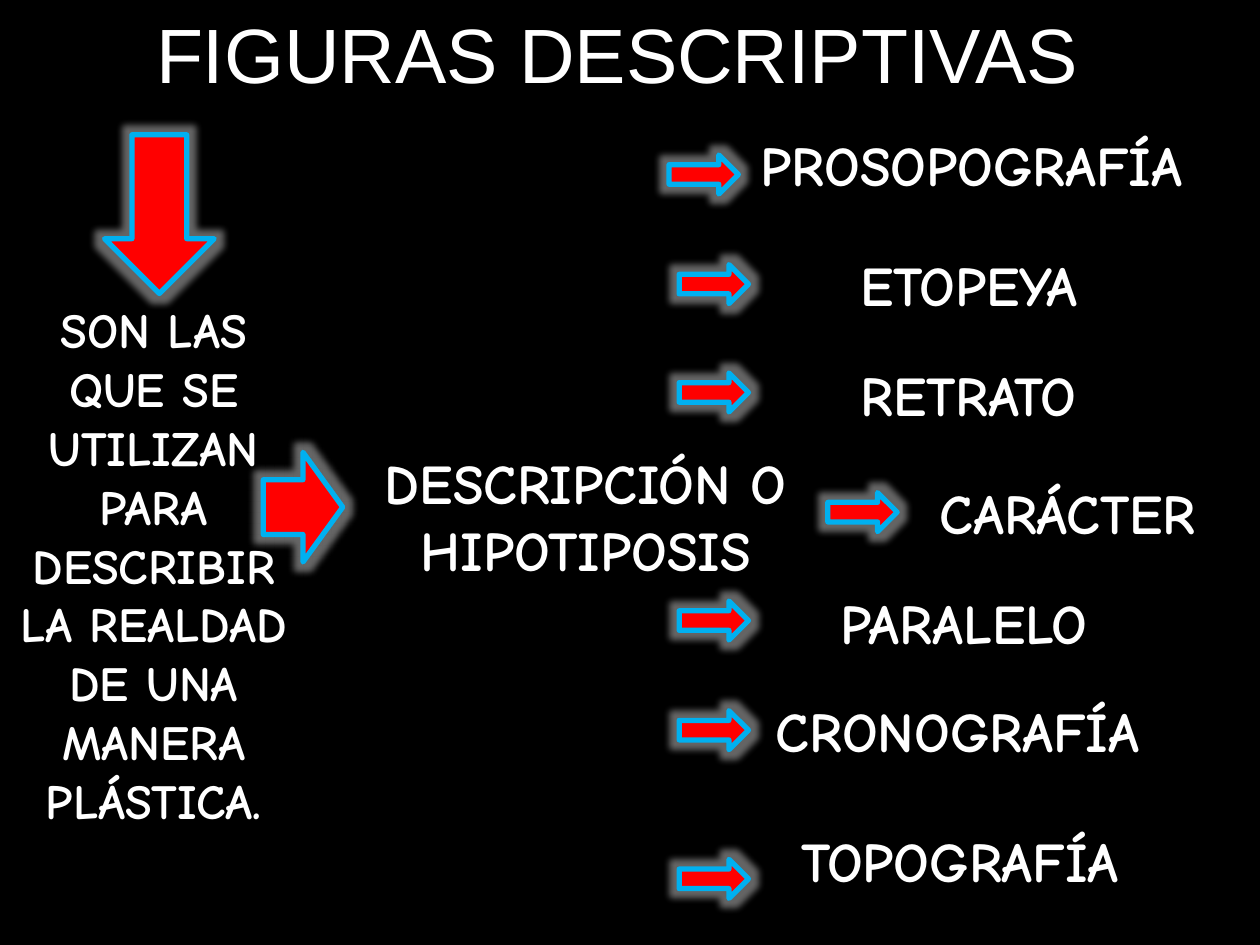
from lxml import etree
from pptx import Presentation
from pptx.dml.color import RGBColor
from pptx.enum.shapes import MSO_SHAPE as Shape
from pptx.enum.text import MSO_AUTO_SIZE as Fit, PP_ALIGN as Align
from pptx.oxml.ns import qn
from pptx.util import Inches, Pt

BLACK = RGBColor(0x00, 0x00, 0x00)
WHITE = RGBColor(0xFF, 0xFF, 0xFF)
RED = RGBColor(0xFF, 0x00, 0x00)
BLUE = RGBColor(0x00, 0xB0, 0xF0)
HAND = "Comic Neue"

# Content: text, box (left, top, width, height)
TITLE = ("FIGURAS DESCRIPTIVAS", (1.14, 0, 7.64, 0.84))
MEANING = ("SON LAS QUE SE UTILIZAN PARA DESCRIBIR LA REALDAD "
           "DE UNA MANERA PLÁSTICA.", (0, 2.33, 2.44, 4.81))
TOPIC = ("DESCRIPCIÓN O HIPOTIPOSIS", (2.64, 3.51, 4.02, 1.18))

# Figures: name, text left, top, width, arrow left, top
FIGURES = [
    ("PROSOPOGRAFÍA", 5.94, 0.99, 4.72, 5.31, 1.23),
    ("ETOPEYA", 6.73, 1.94, 2.4, 5.39, 2.1),
    ("RETRATO", 6.73, 2.81, 2.48, 5.39, 2.96),
    ("CARÁCTER", 7.36, 3.75, 2.87, 6.57, 3.91),
    ("PARALELO", 6.57, 4.62, 3.74, 5.39, 4.77),
    ("CRONOGRAFÍA", 6.06, 5.48, 3.94, 5.39, 5.64),
    ("TOPOGRAFÍA", 6.26, 6.51, 3.27, 5.39, 6.82),
]

deck = Presentation()
deck.slide_width, deck.slide_height = Inches(10), Inches(7.5)
slide = deck.slides.add_slide(deck.slide_layouts[6])
slide.background.fill.solid()
slide.background.fill.fore_color.rgb = BLACK


def add_text(text, box, size, font=HAND, bold=True, align=Align.LEFT, wrap=True):
    frame = slide.shapes.add_textbox(*map(Inches, box)).text_frame
    frame.word_wrap = wrap
    frame.auto_size = Fit.SHAPE_TO_FIT_TEXT
    para = frame.paragraphs[0]
    para.alignment = align
    run = para.add_run()
    run.text = text
    run.font.name, run.font.size, run.font.bold = font, Pt(size), bold
    run.font.color.rgb = WHITE


def add_arrow(kind, box):
    arrow = slide.shapes.add_shape(kind, *map(Inches, box))
    arrow.fill.solid()
    arrow.fill.fore_color.rgb = RED
    arrow.line.color.rgb = BLUE
    arrow.line.width = Pt(3)
    # Soft white glow in place of the shadow
    arrow.shadow.inherit = False
    effects = arrow.element.spPr.find(qn("a:effectLst"))
    glow = etree.SubElement(effects, qn("a:glow"), rad=str(Pt(8)))
    tint = etree.SubElement(glow, qn("a:srgbClr"), val=str(WHITE))
    etree.SubElement(tint, qn("a:alpha"), val="40000")


# Title, meaning and topic
add_text(*TITLE, 44, font="Arial", bold=False, wrap=False)
add_arrow(Shape.DOWN_ARROW, (0.83, 1.07, 0.87, 1.26))
add_text(*MEANING, 28, align=Align.CENTER)
add_text(*TOPIC, 32, align=Align.CENTER)

# Figures, each with its arrow
for name, left, top, width, tip_x, tip_y in FIGURES:
    add_arrow(Shape.RIGHT_ARROW, (tip_x, tip_y, 0.55, 0.31))
    add_text(name, (left, top, width, 0.64), 32)

# Arrow from meaning to topic
add_arrow(Shape.RIGHT_ARROW, (2.09, 3.59, 0.63, 0.87))

deck.save("out.pptx")
